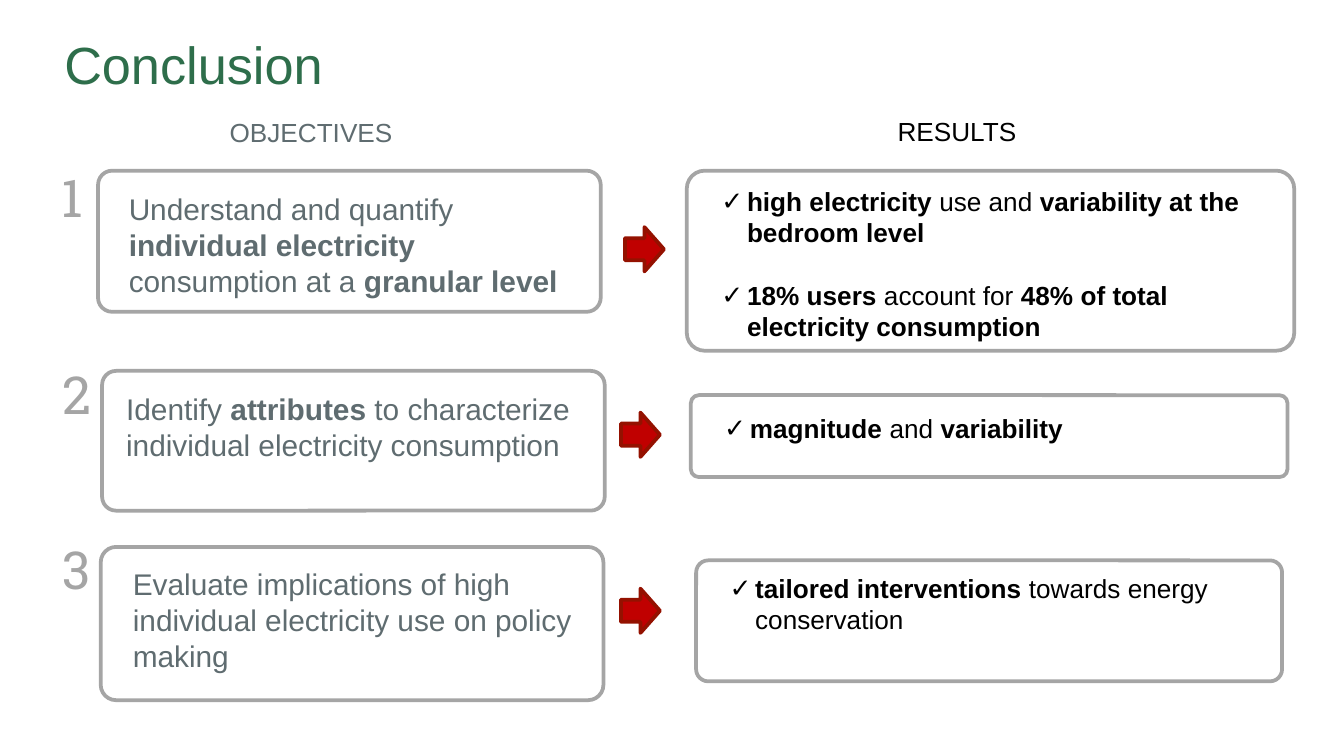
"""Build the conclusion slide pairing three objectives with their results."""
from lxml.etree import SubElement
from pptx import Presentation
from pptx.dml.color import RGBColor
from pptx.enum.shapes import MSO_SHAPE as Shape
from pptx.enum.text import MSO_ANCHOR as Anchor, PP_ALIGN as Align
from pptx.oxml.ns import qn
from pptx.util import Inches, Pt

COLORS = {
    "title": "2E6E4B",
    "objective": "5F6C70",
    "result": "000000",
    "outline": "A5A5A5",
    "arrow": "C00000",
    "arrow_edge": "941100",
}
STYLES = {
    "title": ("title", {"size": Pt(28), "name": "Arial"}),
    "number": ("outline", {"size": Pt(28), "name": "Roboto Slab"}),
    "objective": ("objective", {"size": Pt(16), "name": "Arial"}),
    "result": ("result", {"size": Pt(14), "name": "Arial"}),
    "objective_heading": ("objective", {"size": Pt(14), "name": "Arial"}),
}
MIDDLE = {
    "vertical_anchor": Anchor.MIDDLE,
    "margin_top": Inches(0.1),
    "margin_bottom": Inches(0.1),
}
CHECK_INDENT = Inches(0.19)
SLIDE_WIDTH = 10


def add_text(shapes, place, paragraphs, style, frame_format=None, align=Align.LEFT, checked=False):
    """Write paragraphs whose bold parts stand between asterisks."""
    color, font_format = STYLES[style]
    frame = shapes.add_textbox(*map(Inches, place)).text_frame
    for key, value in {"word_wrap": True, **(frame_format or {})}.items():
        setattr(frame, key, value)
    for index, text in enumerate(paragraphs):
        paragraph = frame.add_paragraph() if index else frame.paragraphs[0]
        paragraph.alignment = align
        if index:
            paragraph.space_before = Pt(16.8)
        if checked:
            properties = paragraph._p.get_or_add_pPr()
            properties.set("marL", str(CHECK_INDENT))
            properties.set("indent", str(-CHECK_INDENT))
            bullet_color = SubElement(properties, qn("a:buClr"))
            SubElement(bullet_color, qn("a:srgbClr"), val=COLORS["result"])
            SubElement(properties, qn("a:buFont"), typeface="Arial")
            SubElement(properties, qn("a:buChar"), char="✓")
        for part, words in enumerate(text.split("*")):
            if words:
                run = paragraph.add_run()
                run.text = words
                for key, value in {**font_format, "bold": part % 2 == 1}.items():
                    setattr(run.font, key, value)
                run.font.color.rgb = RGBColor.from_string(COLORS[color])


def add_outlined(shapes, kind, place, line, fill=None):
    """Add a shape with a 2 pt outline and an optional fill."""
    shape = shapes.add_shape(kind, *map(Inches, place))
    shape.shadow.inherit = False
    shape.line.width = Pt(2)
    shape.line.color.rgb = RGBColor.from_string(COLORS[line])
    if fill:
        shape.fill.solid()
        shape.fill.fore_color.rgb = RGBColor.from_string(COLORS[fill])
    else:
        shape.fill.background()
        shape.adjustments[0] = 0.1


deck = Presentation()
deck.slide_width = Inches(SLIDE_WIDTH)
deck.slide_height = Inches(SLIDE_WIDTH * 9 / 16)
slide = deck.slides.add_slide(deck.slide_layouts[6])

add_text(slide.shapes, (0.38, 0.19, 2.59, 0.56), ["Conclusion"], "title", MIDDLE)
add_text(slide.shapes, (1.61, 0.82, 1.7, 0.34), ["OBJECTIVES"], "objective_heading")
add_text(slide.shapes, (6.58, 0.81, 1.54, 0.34), ["RESULTS"], "result")

goals = [
    {
        "number": (0.09, 1.14),
        "arrow": (4.65, 1.69),
        "objective": (
            (0.86, 1.37, 3.59, 0.91),
            (0.73, 1.27, 3.74, 1.05),
            ["Understand and quantify *individual electricity *consumption at a *granular level*"],
        ),
        "result": (
            (5.27, 1.33, 4.34, 1.28),
            (5.11, 1.27, 4.52, 1.34),
            [
                "*high electricity *use and *variability at the bedroom level*",
                "*18% users *account for *48% of total electricity consumption*",
            ],
        ),
    },
    {
        "number": (0.12, 2.61),
        "arrow": (4.62, 3.07),
        "objective": (
            (0.84, 2.86, 3.61, 1.14),
            (0.76, 2.76, 3.74, 1.04),
            ["Identify *attributes* to characterize individual electricity consumption"],
        ),
        "result": (
            (5.29, 3.02, 4.25, 0.34),
            (5.14, 2.94, 4.44, 0.61),
            ["*magnitude* and *variability*"],
        ),
    },
    {
        "number": (0.12, 3.91),
        "arrow": (4.62, 4.38),
        "objective": (
            (0.89, 4.16, 3.61, 0.91),
            (0.75, 4.07, 3.74, 1.14),
            ["Evaluate implications of high individual electricity use on policy making"],
        ),
        "result": (
            (5.33, 4.21, 4.18, 0.57),
            (5.18, 4.17, 4.36, 0.9),
            ["*tailored interventions *towards energy conservation"],
        ),
    },
]

for number, goal in enumerate(goals, start=1):
    add_text(slide.shapes, (*goal["number"], 0.9, 0.64), [str(number)], "number", MIDDLE, Align.CENTER)
    for side in ("objective", "result"):
        text_place, outline_place, paragraphs = goal[side]
        card = slide.shapes.add_group_shape().shapes
        add_text(card, text_place, paragraphs, side, checked=side == "result")
        add_outlined(card, Shape.ROUNDED_RECTANGLE, outline_place, "outline")
    add_outlined(slide.shapes, Shape.RIGHT_ARROW, (*goal["arrow"], 0.29, 0.33), "arrow_edge", "arrow")

deck.save("out.pptx")
